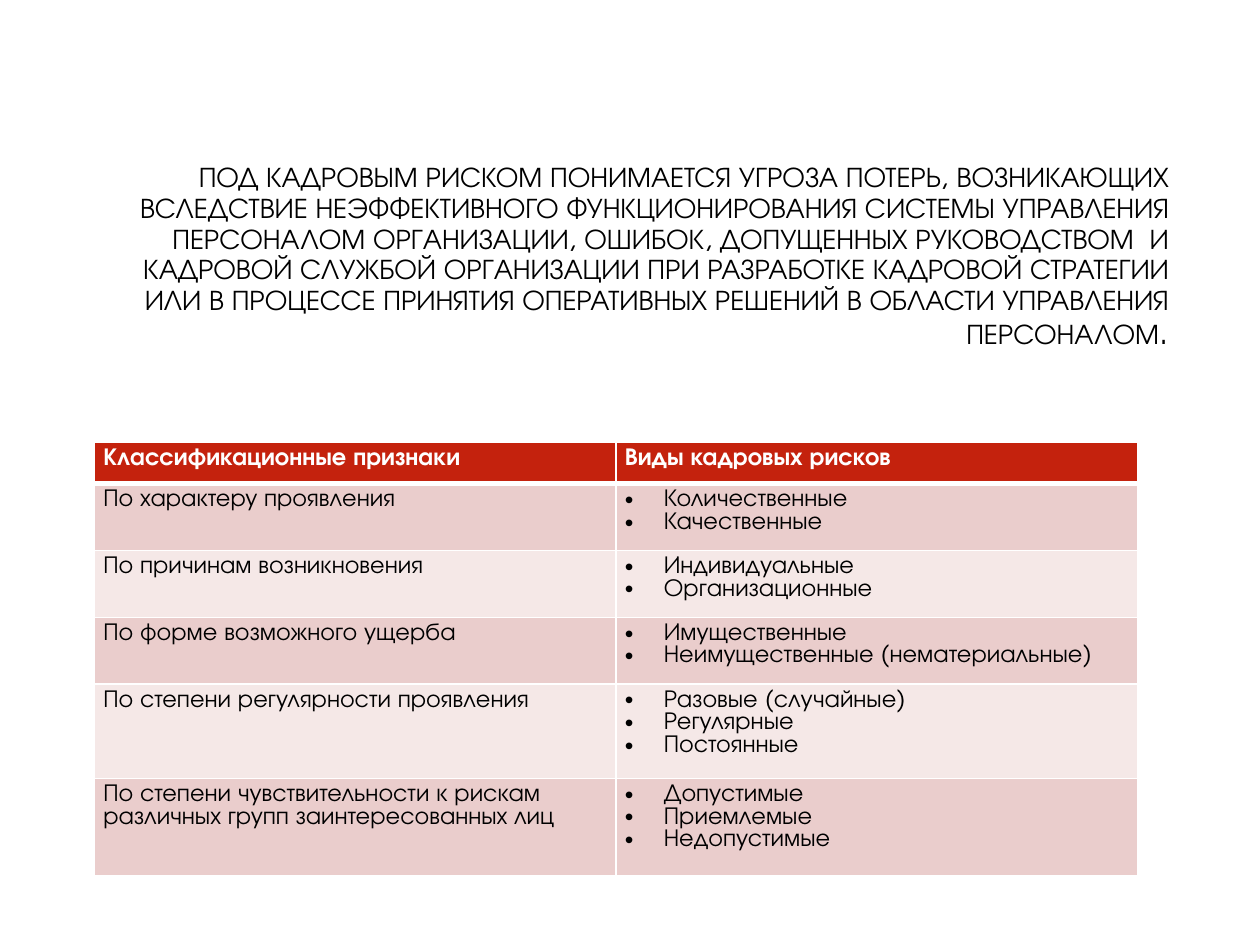
from lxml import etree
from pptx import Presentation
from pptx.dml.color import RGBColor
from pptx.enum.text import MSO_ANCHOR, PP_ALIGN
from pptx.oxml.ns import qn
from pptx.util import Inches, Pt

RIGHT, MIDDLE = PP_ALIGN.RIGHT, MSO_ANCHOR.MIDDLE
FONT = "TeX Gyre Adventor"
WHITE, BLACK, RED = "FFFFFF", "000000", "C4220D"
BANDS = ("EACDCC", "F5E8E7")

TITLE = (
    "ПОД КАДРОВЫМ РИСКОМ ПОНИМАЕТСЯ УГРОЗА ПОТЕРЬ, ВОЗНИКАЮЩИХ "
    "ВСЛЕДСТВИЕ НЕЭФФЕКТИВНОГО ФУНКЦИОНИРОВАНИЯ СИСТЕМЫ УПРАВЛЕНИЯ "
    "ПЕРСОНАЛОМ ОРГАНИЗАЦИИ, ОШИБОК, ДОПУЩЕННЫХ РУКОВОДСТВОМ  И "
    "КАДРОВОЙ СЛУЖБОЙ ОРГАНИЗАЦИИ ПРИ РАЗРАБОТКЕ КАДРОВОЙ СТРАТЕГИИ "
    "ИЛИ В ПРОЦЕССЕ ПРИНЯТИЯ ОПЕРАТИВНЫХ РЕШЕНИЙ В ОБЛАСТИ УПРАВЛЕНИЯ "
    "ПЕРСОНАЛОМ"
)
HEADS = ("Классификационные признаки", "Виды кадровых рисков")
RISKS = (
    ("По характеру проявления", ("Количественные", "Качественные")),
    ("По причинам возникновения", ("Индивидуальные", "Организационные")),
    ("По форме возможного ущерба",
     ("Имущественные", "Неимущественные (нематериальные)")),
    ("По степени регулярности проявления",
     ("Разовые (случайные)", "Регулярные", "Постоянные")),
    ("По степени чувствительности к рискам различных групп "
     "заинтересованных лиц", ("Допустимые", "Приемлемые", "Недопустимые")),
)
ROWS = (0.33, 0.53, 0.53, 0.53, 0.75, 0.77)


def color(code):
    return RGBColor.from_string(code)


def style(font, size, code, bold=False):
    font.name, font.size, font.bold = FONT, Pt(size), bold
    font.color.rgb = color(code)


def add_title(slide, box):
    frame = slide.shapes.add_textbox(*map(Inches, box)).text_frame
    frame.word_wrap = True
    frame.vertical_anchor = MIDDLE
    para = frame.paragraphs[0]
    para.alignment, para.line_spacing = RIGHT, 0.9
    for text, size in ((TITLE, 16.2), (".", 18.9)):
        run = para.add_run()
        run.text = text
        style(run.font, size, BLACK)


def add_bullet(para):
    props = para._p.get_or_add_pPr()
    props.set("marL", str(Inches(0.31)))
    props.set("indent", str(-Inches(0.31)))
    etree.SubElement(props, qn("a:buFont")).set("typeface", "Arial")
    etree.SubElement(props, qn("a:buChar")).set("char", "•")


def add_borders(cell, base):
    """Draw white edges, with the bottom one base points wide."""
    props = cell._tc.get_or_add_tcPr()
    for spot, (side, width) in enumerate(
            (("L", 1), ("R", 1), ("T", 1), ("B", base))):
        line = etree.Element(qn("a:ln" + side), w=str(Pt(width)))
        fill = etree.SubElement(line, qn("a:solidFill"))
        etree.SubElement(fill, qn("a:srgbClr")).set("val", WHITE)
        props.insert(spot, line)


def fill_cell(cell, lines, back, head=False, listed=False):
    cell.margin_left = cell.margin_right = Inches(0.07)
    cell.margin_top = cell.margin_bottom = Inches(0.04)
    cell.fill.solid()
    cell.fill.fore_color.rgb = color(back)
    add_borders(cell, 3 if head else 1)
    cell.text_frame.text = "\n".join(lines)
    for para in cell.text_frame.paragraphs:
        para.line_spacing = Pt(12.9)
        if listed:
            add_bullet(para)
        for run in para.runs:
            style(run.font, 14, WHITE if head else BLACK, head)


def add_risks(slide, left, top, width):
    shape = slide.shapes.add_table(
        len(ROWS), len(HEADS), Inches(left), Inches(top),
        Inches(width), Inches(sum(ROWS)))
    table = shape.table
    for row, high in zip(table.rows, ROWS):
        row.height = Inches(high)
    for col, text in enumerate(HEADS):
        table.columns[col].width = Inches(width / len(HEADS))
        fill_cell(table.cell(0, col), [text], RED, head=True)
    for row, (sign, kinds) in enumerate(RISKS, 1):
        back = BANDS[(row - 1) % 2]
        fill_cell(table.cell(row, 0), [sign], back)
        fill_cell(table.cell(row, 1), kinds, back, listed=True)


def main():
    deck = Presentation()
    deck.slide_width, deck.slide_height = Inches(10), Inches(7.5)
    slide = deck.slides.add_slide(deck.slide_layouts[6])
    add_title(slide, (0.75, 1.05, 8.62, 1.99))
    add_risks(slide, 0.75, 3.51, 8.28)
    deck.save("out.pptx")


if __name__ == "__main__":
    main()
